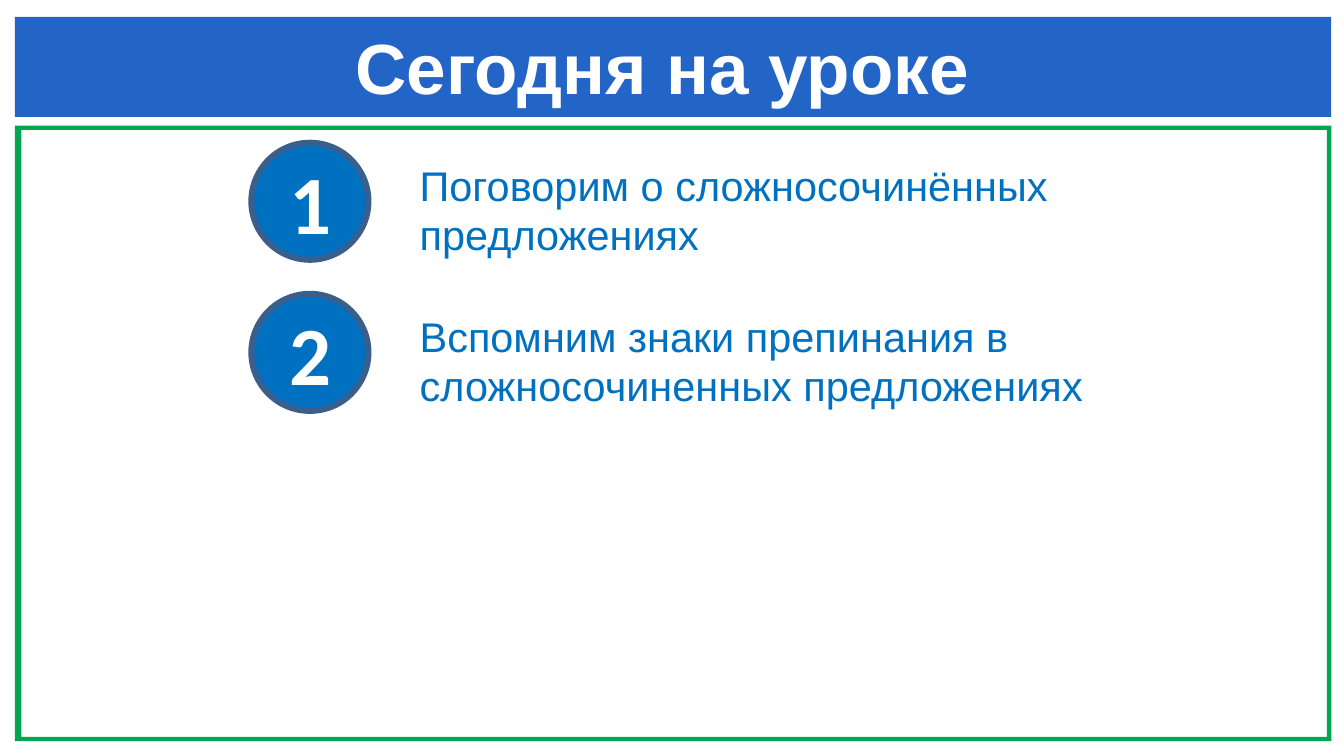
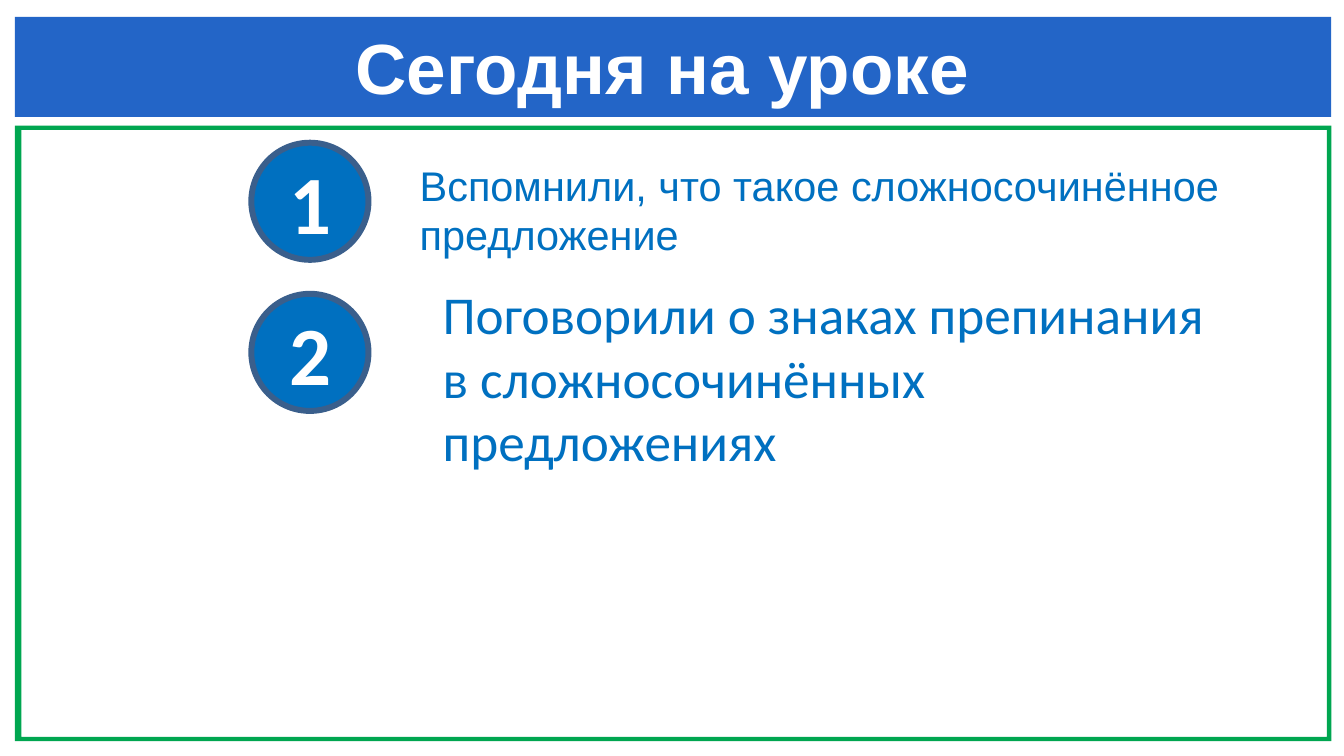
from dataclasses import dataclass

from lxml.etree import SubElement
from pptx import Presentation
from pptx.dml.color import RGBColor
from pptx.enum.shapes import MSO_SHAPE
from pptx.enum.text import MSO_ANCHOR, MSO_AUTO_SIZE, PP_ALIGN
from pptx.oxml.ns import qn
from pptx.util import Inches, Pt


@dataclass(frozen=True)
class Theme:
    """Colours, fonts and type sizes of the deck."""

    frame: str = "00A650"
    band: str = "2365C7"
    accent: str = "0070C0"
    badge_line: str = "3A5F8C"
    white: str = "FFFFFF"
    sans: str = "Arial"
    rounded: str = "Calibri"
    title_size: int = 24
    item_size: int = 14
    large_size: int = 18
    badge_size: int = 28


THEME = Theme()
TITLE = "Сегодня на уроке "
TITLE_FORMAT = {"name": THEME.sans, "size": Pt(THEME.title_size), "bold": True}
ITEM_FORMAT = {"name": THEME.sans, "size": Pt(THEME.item_size)}
LARGE_FORMAT = {"name": THEME.rounded, "size": Pt(THEME.large_size)}
BADGE_FORMAT = {"name": THEME.rounded, "size": Pt(THEME.badge_size), "bold": True}
NO_INSET, DEFAULT_INSET = (0, 0), (0.1, 0.05)

LEFT, RIGHT = 0.07, 6.25
BAND_TOP, BAND_HEIGHT = 0.08, 0.47
FRAME_TOP, FRAME_BOTTOM = 0.59, 3.48
BADGE_LEFT, BADGE_TOP, BADGE_SIZE, BADGE_STEP = 1.18, 0.67, 0.55, 0.71
TITLE_BOX = (0.33, 0.11, 5.65, 0.4)
FIRST_BOX = (1.97, 0.75, 3.86, 0.47)

LESSONS = (
    {
        "first": "Поговорим о сложносочинённых предложениях",
        "second": "Вспомним знаки препинания в сложносочиненных предложениях",
        "box": (1.97, 1.46, 3.62, 0.47),
        "font": ITEM_FORMAT,
        "inset": NO_INSET,
    },
    {
        "first": "Вспомнили, что такое сложносочинённое предложение",
        "second": "Поговорили о знаках препинания в сложносочинённых предложениях",
        "box": (1.98, 1.27, 3.91, 1.01),
        "font": LARGE_FORMAT,
        "inset": DEFAULT_INSET,
    },
)


def set_attributes(target, values):
    """Set each named attribute of the target."""
    for name, value in values.items():
        setattr(target, name, value)


def paint(shape, fill, line=None):
    """Give a shape a flat fill and an optional outline."""
    shape.shadow.inherit = False
    shape.fill.solid()
    shape.fill.fore_color.rgb = RGBColor.from_string(fill)
    if line:
        shape.line.color.rgb = RGBColor.from_string(line)
        shape.line.width = Pt(2)
    else:
        shape.line.fill.background()


def write(shape, text, font, color, alignment=PP_ALIGN.LEFT, space_before=0):
    """Write one formatted paragraph into a shape."""
    paragraph = shape.text_frame.paragraphs[0]
    set_attributes(paragraph, {"alignment": alignment, "space_before": Pt(space_before)})
    run = paragraph.add_run()
    run.text = text
    set_attributes(run.font, font)
    run.font.color.rgb = RGBColor.from_string(color)
    return paragraph


def place_text(shape, box, inset=NO_INSET):
    """Move a text shape and set how its frame behaves."""
    names = ("left", "top", "width", "height")
    set_attributes(shape, {name: Inches(value) for name, value in zip(names, box)})
    horizontal, vertical = (Inches(value) for value in inset)
    set_attributes(shape.text_frame, {
        "margin_left": horizontal, "margin_right": horizontal,
        "margin_top": vertical, "margin_bottom": vertical,
        "word_wrap": True, "vertical_anchor": MSO_ANCHOR.TOP,
        "auto_size": MSO_AUTO_SIZE.SHAPE_TO_FIT_TEXT,
    })


def remove_bullet(paragraph):
    """Turn off the inherited bullet and hanging indent."""
    properties = paragraph._p.get_or_add_pPr()
    properties.set("marL", "0")
    properties.set("indent", "0")
    SubElement(properties, qn("a:buNone"))


def add_frame(shapes):
    """Draw the frame as a bracket closed by a bar."""
    inner_left, inner_right = 0.1, 6.23
    inner_top, inner_bottom = 0.61, 3.46
    bar = ((RIGHT, inner_top), (inner_right, inner_top),
           (inner_right, inner_bottom), (RIGHT, inner_bottom))
    bracket = ((RIGHT, FRAME_TOP), (LEFT, FRAME_TOP), (LEFT, FRAME_BOTTOM),
               (RIGHT, FRAME_BOTTOM), (RIGHT, inner_bottom), (inner_left, inner_bottom),
               (inner_left, inner_top), (RIGHT, inner_top))
    bar, bracket = ([(Inches(x), Inches(y)) for x, y in points] for points in (bar, bracket))
    builder = shapes.build_freeform(*bar[0])
    builder.add_line_segments(bar[1:], close=True)
    builder.move_to(*bracket[0])
    builder.add_line_segments(bracket[1:], close=True)
    frame = builder.convert_to_shape()
    paint(frame, THEME.frame)
    return frame


def add_band(shapes):
    """Draw the title band."""
    band = shapes.add_shape(MSO_SHAPE.RECTANGLE, Inches(LEFT), Inches(BAND_TOP),
                            Inches(RIGHT - LEFT), Inches(BAND_HEIGHT))
    paint(band, THEME.band)
    return band


def decorate_layout(layout, slide):
    """Draw the shared band and frame and move them behind the layout's placeholders."""
    last_id = max(shape.shape_id for shape in layout.shapes)
    decorations = (add_frame(slide.shapes), add_band(slide.shapes))
    for offset, shape in enumerate(decorations):
        shape.element.nvSpPr.cNvPr.set("id", str(last_id + offset + 1))
        layout.shapes.element.insert(2 + offset, shape.element)


def add_badge(slide, number):
    """Add a numbered circle at its step in the column."""
    top = BADGE_TOP + (number - 1) * BADGE_STEP
    badge = slide.shapes.add_shape(MSO_SHAPE.OVAL, Inches(BADGE_LEFT), Inches(top),
                                   Inches(BADGE_SIZE), Inches(BADGE_SIZE))
    paint(badge, THEME.accent, THEME.badge_line)
    badge.text_frame.vertical_anchor = MSO_ANCHOR.MIDDLE
    write(badge, str(number), BADGE_FORMAT, THEME.white, PP_ALIGN.CENTER)


def fill_slide(slide, lesson):
    """Fill one slide with its title and two numbered items."""
    title, body = slide.shapes.title, slide.placeholders[1]
    place_text(title, TITLE_BOX)
    write(title, TITLE, TITLE_FORMAT, THEME.white, PP_ALIGN.CENTER)
    place_text(body, FIRST_BOX)
    remove_bullet(write(body, lesson["first"], ITEM_FORMAT, THEME.accent))
    for number in (1, 2):
        add_badge(slide, number)
    second = slide.shapes.add_textbox(*(Inches(value) for value in lesson["box"]))
    place_text(second, lesson["box"], lesson["inset"])
    write(second, lesson["second"], lesson["font"], THEME.accent, space_before=12)


def main():
    """Build and save the deck."""
    presentation = Presentation()
    set_attributes(presentation, {"slide_width": Inches(6.31), "slide_height": Inches(3.55)})
    layout = presentation.slide_layouts[1]
    slides = [presentation.slides.add_slide(layout) for lesson in LESSONS]
    decorate_layout(layout, slides[0])
    for slide, lesson in zip(slides, LESSONS):
        fill_slide(slide, lesson)
    presentation.save("out.pptx")


if __name__ == "__main__":
    main()
